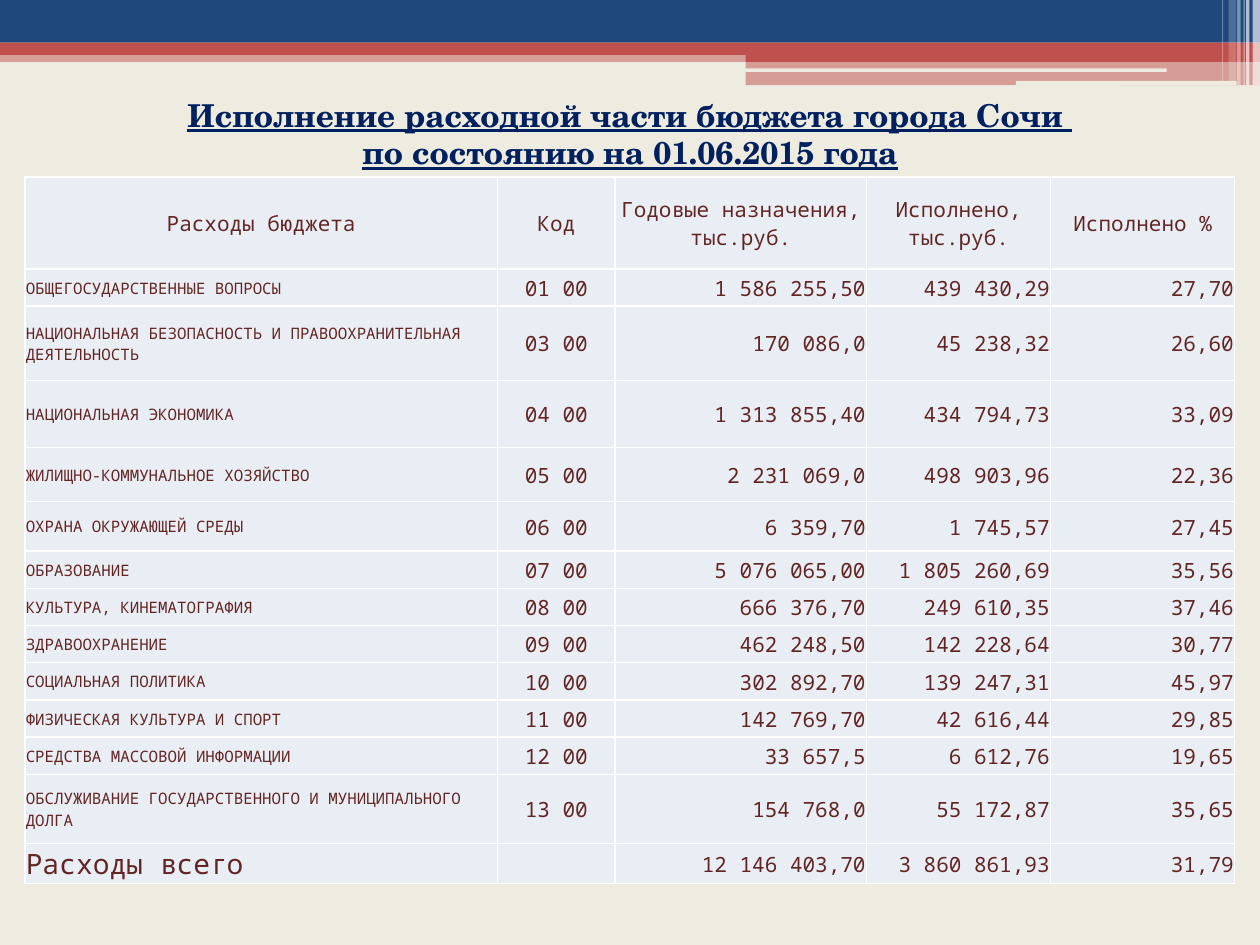
from lxml.etree import SubElement
from pptx import Presentation
from pptx.dml.color import RGBColor
from pptx.enum.shapes import MSO_SHAPE as Shape
from pptx.enum.text import MSO_ANCHOR as Anchor, PP_ALIGN as Align
from pptx.oxml.ns import qn
from pptx.util import Cm, Pt

COLORS = {"cream": "EEECE1", "blue": "1F497D", "red": "C0504D", "white": "FFFFFF",
          "navy": "002060", "maroon": "632523", "cell": "E9EDF4"}


def color(name):
    return RGBColor.from_string(COLORS[name])


def write(frame, text, *, size, font, ink, align, bold=False, underline=False):
    """Fill a text frame, one paragraph for each line of the text."""
    for number, line in enumerate(text.split("\n")):
        para = frame.paragraphs[0] if number == 0 else frame.add_paragraph()
        para.alignment = align
        para.font.size = Pt(size)
        if line:
            span = para.add_run()
            span.text = line
            span.font.size = Pt(size)
            span.font.name = font
            span.font.bold = bold
            span.font.underline = underline
            span.font.color.rgb = color(ink)


deck = Presentation()
deck.slide_width, deck.slide_height = Cm(25.4), Cm(19.05)
page = deck.slides.add_slide(deck.slide_layouts[5])
page.background.fill.solid()
page.background.fill.fore_color.rgb = color("cream")

# Header bands: left, top, width, height (cm), colour, opacity in percent
bands = [
    (0, 1.02, 25.4, 0.23, "red", 50),
    (0, 0, 25.4, 0.86, "blue", 100),
    (0, 0.86, 25.4, 0.25, "red", 100),
    (15.03, 1, 10.37, 0.25, "red", 100),
    (15.03, 1.22, 10.37, 0.5, "red", 50),
    (15.02, 1.38, 8.5, 0.07, "cream", 100),
    (20.48, 1.63, 4.45, 0.09, "cream", 100),
    # Light stripes in the corner
    (25.25, 0, 0.15, 1.72, "white", 65),
    (25.12, 0, 0.07, 1.72, "white", 65),
    (25.07, 0, 0.02, 1.72, "white", 60),
    (24.94, 0, 0.07, 1.72, "white", 40),
    (24.77, 0, 0.15, 1.63, "white", 20),
    (24.64, 0, 0.02, 1.63, "white", 30),
]
for left, top, width, height, fill, opacity in bands:
    kind = Shape.ROUNDED_RECTANGLE if fill == "cream" else Shape.RECTANGLE
    band = page.shapes.add_shape(kind, Cm(left), Cm(top), Cm(width), Cm(height))
    band.shadow.inherit = False
    band.line.fill.background()
    band.fill.solid()
    band.fill.fore_color.rgb = color(fill)
    if opacity < 100:
        shade = band.fill._xPr.find(qn("a:solidFill"))[0]
        SubElement(shade, qn("a:alpha"), val=str(opacity * 1000))

# Title
title = page.shapes.title
title.left, title.top, title.width, title.height = Cm(0.5), Cm(1.8), Cm(24.4), Cm(1.8)
title.text_frame.word_wrap = True
title.text_frame.vertical_anchor = Anchor.TOP
write(title.text_frame,
      "Исполнение расходной части бюджета города Сочи \nпо состоянию на 01.06.2015 года",
      size=18, font="TeX Gyre Schola", ink="navy", align=Align.CENTER,
      bold=True, underline=True)

# Budget table
rows = [
    ("Расходы бюджета", "Код", "Годовые назначения, тыс.руб.", "Исполнено, тыс.руб.",
     "Исполнено %"),
    ("ОБЩЕГОСУДАРСТВЕННЫЕ ВОПРОСЫ", "01 00", "1 586 255,50", "439 430,29", "27,70"),
    ("НАЦИОНАЛЬНАЯ БЕЗОПАСНОСТЬ И ПРАВООХРАНИТЕЛЬНАЯ ДЕЯТЕЛЬНОСТЬ", "03 00",
     "170 086,0", "45 238,32", "26,60"),
    ("НАЦИОНАЛЬНАЯ ЭКОНОМИКА", "04 00", "1 313 855,40", "434 794,73", "33,09"),
    ("ЖИЛИЩНО-КОММУНАЛЬНОЕ ХОЗЯЙСТВО", "05 00", "2 231 069,0", "498 903,96", "22,36"),
    ("ОХРАНА ОКРУЖАЮЩЕЙ СРЕДЫ", "06 00", "6 359,70", "1 745,57", "27,45"),
    ("ОБРАЗОВАНИЕ", "07 00", "5 076 065,00", "1 805 260,69", "35,56"),
    ("КУЛЬТУРА, КИНЕМАТОГРАФИЯ", "08 00", "666 376,70", "249 610,35", "37,46"),
    ("ЗДРАВООХРАНЕНИЕ", "09 00", "462 248,50", "142 228,64", "30,77"),
    ("СОЦИАЛЬНАЯ ПОЛИТИКА", "10 00", "302 892,70", "139 247,31", "45,97"),
    ("ФИЗИЧЕСКАЯ КУЛЬТУРА И СПОРТ", "11 00", "142 769,70", "42 616,44", "29,85"),
    ("СРЕДСТВА МАССОВОЙ ИНФОРМАЦИИ", "12 00", "33 657,5", "6 612,76", "19,65"),
    ("ОБСЛУЖИВАНИЕ ГОСУДАРСТВЕННОГО И МУНИЦИПАЛЬНОГО ДОЛГА", "13 00",
     "154 768,0", "55 172,87", "35,65"),
    ("Расходы всего", "", "12 146 403,70", "3 860 861,93", "31,79"),
]
widths = [9.53, 2.37, 5.07, 3.71, 3.71]
heights = [1.85, 0.75, 1.5, 1.35, 1.09, 1] + [0.75] * 6 + [1.39, 0.81]
last = len(rows) - 1

table = page.shapes.add_table(len(rows), len(widths), Cm(0.5), Cm(3.57),
                              Cm(sum(widths)), Cm(sum(heights))).table
table.first_row = table.horz_banding = False
for column, width in zip(table.columns, widths):
    column.width = Cm(width)
for line, height in zip(table.rows, heights):
    line.height = Cm(height)

for r, values in enumerate(rows):
    for c, value in enumerate(values):
        cell = table.cell(r, c)
        cell.margin_left = cell.margin_right = cell.margin_top = Cm(0.02)
        cell.margin_bottom = 0
        cell.vertical_anchor = Anchor.MIDDLE
        if r == 0 or c == 1:
            align = Align.CENTER
        else:
            align = Align.LEFT if c == 0 else Align.RIGHT
        size = 12
        if c == 0 and r > 0:
            size = 16 if r == last else 9
        write(cell.text_frame, value, size=size, font="Noto Sans Mono",
              ink="maroon", align=align)
        # White borders come before the fill in the cell properties
        properties = cell._tc.get_or_add_tcPr()
        for side in ("lnL", "lnR", "lnT", "lnB"):
            border = SubElement(properties, qn(f"a:{side}"), w=str(Pt(1)))
            paint = SubElement(border, qn("a:solidFill"))
            SubElement(paint, qn("a:srgbClr"), val=COLORS["white"])
        cell.fill.solid()
        cell.fill.fore_color.rgb = color("cell")

deck.save("out.pptx")
